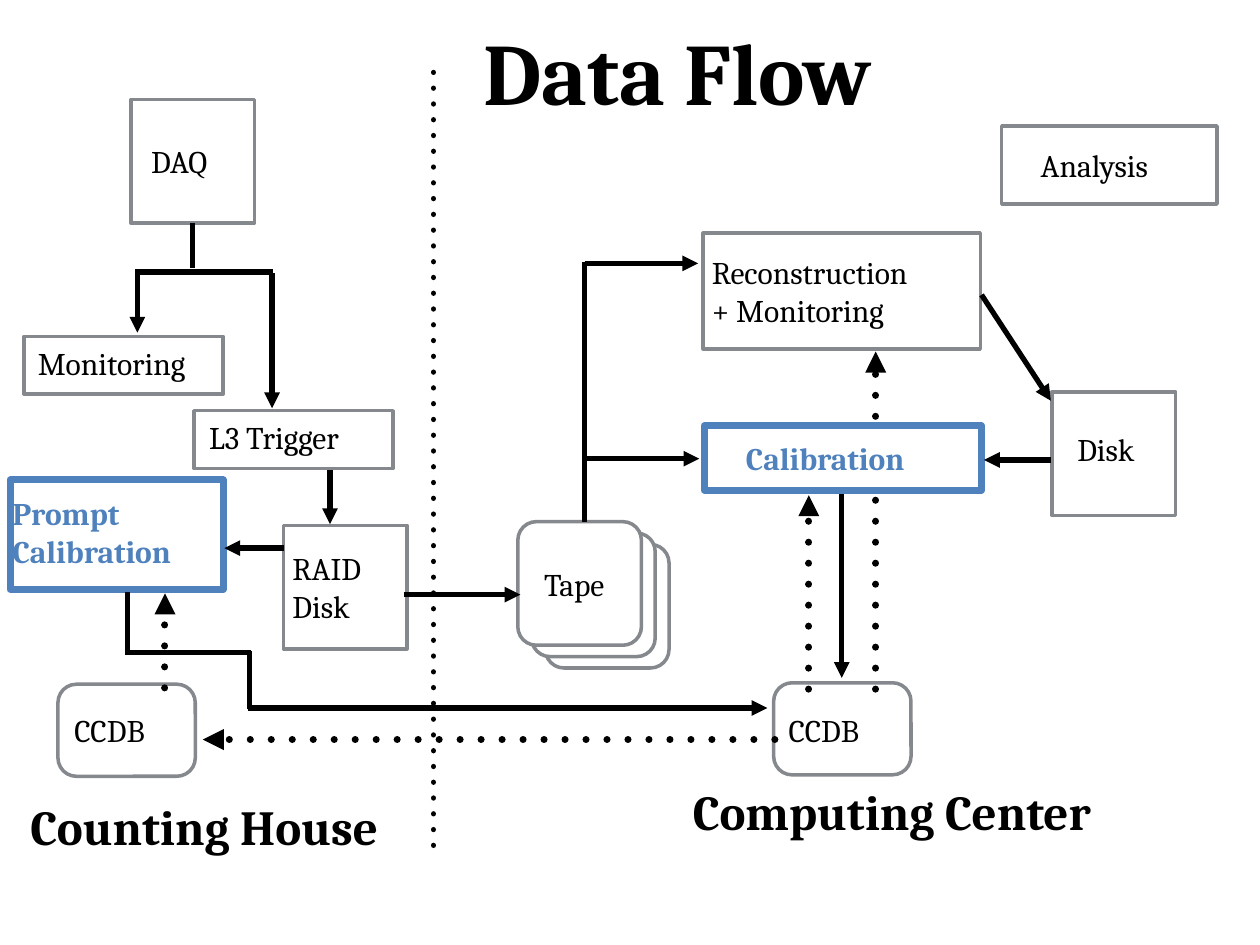
from dataclasses import dataclass

import pptx
import pptx.dml.color
import pptx.enum.shapes
import pptx.enum.text
import pptx.oxml.xmlchemy
import pptx.util

Pt = pptx.util.Pt
Kind = pptx.enum.shapes.MSO_SHAPE
Color = pptx.dml.color.RGBColor.from_string


@dataclass(frozen=True)
class Theme:
    font: str = "Cambria"
    ink: Color = Color("000000")
    gray: Color = Color("85888D")
    blue: Color = Color("4F81BD")
    white: Color = Color("FFFFFF")
    body: int = 18
    place: int = 28
    title: int = 50
    thin: int = 2
    line: int = 3
    bold: int = 4


theme = Theme()
deck = pptx.Presentation()
deck.slide_width, deck.slide_height = Pt(720), Pt(540)
slide = deck.slides.add_slide(deck.slide_layouts[6])
shapes = slide.shapes


def add(parent, tag, **attrs):
    """Append a drawing element with the given attributes."""
    child = pptx.oxml.xmlchemy.OxmlElement(tag)
    for key, value in attrs.items():
        child.set(key, value)
    parent.append(child)
    return child


def link(x1, y1, x2, y2, arrow=True, dots=False, width=theme.line):
    """Draw a solid or dotted line, with an arrowhead at its end if asked."""
    wire = shapes.add_connector(
        pptx.enum.shapes.MSO_CONNECTOR.STRAIGHT, Pt(x1), Pt(y1), Pt(x2), Pt(y2))
    wire.line.color.rgb = theme.ink
    wire.line.width = Pt(width)
    edge = wire.line._get_or_add_ln()
    if dots:
        edge.set("cap", "rnd")
        dash = add(edge, "a:custDash")
        add(dash, "a:ds", d="100000", sp="200000")
    if arrow:
        add(edge, "a:tailEnd", type="triangle")
    add(wire._element.spPr, "a:effectLst")


# Dotted database reads that pass behind the boxes
for x, top in ((500.4, 200.9), (462.2, 283)):
    link(x, 393.8, x, top, dots=True, width=theme.bold)

# Boxes: left, top, width, height, corner, style
side = 70.6
boxes = [
    (74.9, 56.9, side, side, 0, "plain"),         # DAQ
    (162, 300.2, side, side, 0, "plain"),         # RAID disk
    (601.2, 223.9, side, side, 0, "plain"),       # Disk
    (572.4, 72, 123.1, 44.6, 0, "plain"),         # Analysis
    (401.8, 133.2, 158.4, 66.2, 0, "plain"),      # Reconstruction
    (402.5, 243.4, 158.4, 36.7, 0, "key"),        # Calibration
    (13.7, 192.2, 113.8, 33.1, 0, "plain"),       # Monitoring
    (110.9, 234.7, 113.8, 33.1, 0, "plain"),      # L3 trigger
    (5.8, 274.3, 121.7, 62.6, 0, "key"),          # Prompt calibration
    (442.1, 390.2, 78.5, 52.6, 0.2, "plain"),     # CCDB, computing center
    (33.1, 391, 78.5, 52.6, 0.2, "plain"),        # CCDB, counting house
]
# Tapes, the rear one first
boxes += [(295.9 + 7.9 * n, 298.1 + 6.5 * n, side, side, 0.15, "solid")
          for n in (2, 1, 0)]

for left, top, width, height, corner, style in boxes:
    kind = Kind.ROUNDED_RECTANGLE if corner else Kind.RECTANGLE
    box = shapes.add_shape(kind, Pt(left), Pt(top), Pt(width), Pt(height))
    box.shadow.inherit = False
    if corner:
        box.adjustments[0] = corner
    if style == "plain":
        box.fill.background()
    else:
        box.fill.solid()
        box.fill.fore_color.rgb = theme.white
    key = style == "key"
    box.line.color.rgb = theme.blue if key else theme.gray
    box.line.width = Pt(theme.bold if key else theme.thin)

# Border between the two sites
link(247.7, 483.1, 247.7, 35.3, arrow=False, dots=True)

# Plain parts of the bent routes
for ends in (
    (110.2, 153.4, 110.2, 127.4),     # DAQ down to the fork
    (156.2, 155.5, 77, 155.5),        # fork
    (72.7, 373, 72.7, 338.4),         # Prompt calibration down
    (71.3, 373, 143.3, 373),
    (142.6, 405.4, 142.6, 372.2),
    (334.1, 298.1, 334.1, 149.8),     # Tape up
):
    link(*ends, arrow=False)

# Arrows
for ends in (
    (78.5, 155.5, 78.5, 190.1),       # fork to Monitoring
    (155.5, 156.2, 155.5, 233.3),     # fork to L3 trigger
    (188.6, 268.6, 188.6, 299.5),     # L3 trigger to RAID disk
    (162, 313.2, 128.2, 313.2),       # RAID disk to Prompt calibration
    (231.1, 339.8, 297.4, 339.8),     # RAID disk to Tape
    (141.8, 404.6, 438.5, 404.6),     # Prompt calibration to CCDB
    (333.4, 262.1, 399.6, 262.1),     # Tape to Calibration
    (334.1, 150.5, 398.9, 150.5),     # Tape to Reconstruction
    (481, 282.2, 481, 387.4),         # Calibration to CCDB
    (560.9, 168.5, 600.5, 229),       # Reconstruction to Disk
    (600.5, 262.8, 562.3, 262.8),     # Disk to Calibration
):
    link(*ends)

# Dotted database reads in front of the boxes
for ends in ((442.8, 422.6, 115.9, 422.6), (94.3, 393.1, 94.3, 339.1)):
    link(*ends, dots=True, width=theme.bold)

# Labels: text, left, top, width, height, size, color, bold, wrap
body = (theme.body, theme.ink, False, False)
place = (theme.place, theme.ink, True)
key = (theme.body, theme.blue, True)
labels = [
    ("Data Flow", 273.6, 7.2, 242.6, 66.2, theme.title, theme.ink, True, False),
    ("Counting House", 14.4, 452.2, 229, 39.6, *place, True),
    ("Computing Center", 393.1, 443.5, 247, 39.6, *place, False),
    ("DAQ", 83.5, 78.5, 48.2, 27.4, *body),
    ("RAID\nDisk", 164.2, 311, 51.8, 49, *body),
    ("Tape", 306.7, 319.7, 43.2, 27.4, *body),
    ("Analysis", 591.8, 80.6, 75.6, 27.4, *body),
    ("Reconstruction\n+ Monitoring", 403.9, 141.8, 126.7, 49, *body),
    ("Disk", 612.7, 242.6, 43.2, 27.4, *body),
    ("CCDB", 447.8, 403.2, 56.9, 27.4, *body),
    ("CCDB", 39.6, 403.2, 56.9, 27.4, *body),
    ("Monitoring", 18.7, 193.7, 97.9, 27.4, *body),
    ("L3 Trigger", 116.6, 236.2, 88.6, 27.4, *body),
    ("Calibration", 423.4, 247.7, 100.8, 27.4, *key, False),
    ("Prompt\nCalibration", 4.3, 279.4, 124.6, 49, *key, True),
]
for text, left, top, width, height, size, color, bold, wrap in labels:
    label = shapes.add_textbox(Pt(left), Pt(top), Pt(width), Pt(height))
    frame = label.text_frame
    frame.word_wrap = wrap
    frame.auto_size = pptx.enum.text.MSO_AUTO_SIZE.SHAPE_TO_FIT_TEXT
    frame.vertical_anchor = pptx.enum.text.MSO_ANCHOR.MIDDLE
    pad = Pt(4.3 if text == "Tape" else 2.9)
    frame.margin_left = frame.margin_right = pad
    frame.margin_top = frame.margin_bottom = pad
    frame.text = text
    for para in frame.paragraphs:
        para.font.name = theme.font
        para.font.size = Pt(size)
        para.font.color.rgb = color
        para.font.bold = bold

deck.save("out.pptx")
